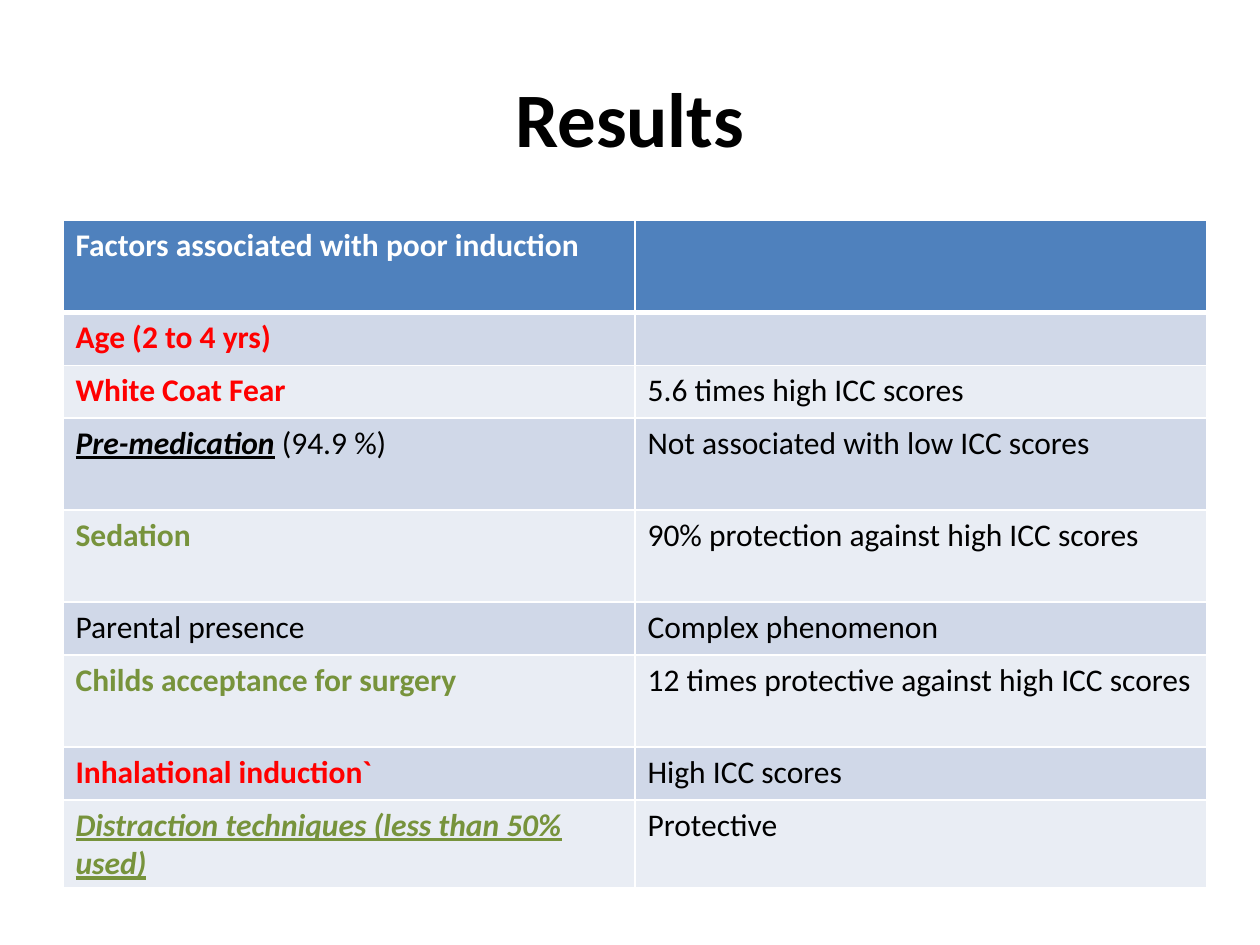
from lxml import etree
from pptx import Presentation
from pptx.dml.color import RGBColor
from pptx.enum import text
from pptx.oxml.ns import qn
from pptx.util import Inches, Pt

BLACK = RGBColor(0x00, 0x00, 0x00)
WHITE = RGBColor(0xFF, 0xFF, 0xFF)
RED = RGBColor(0xFF, 0x00, 0x00)
GREEN = RGBColor(0x77, 0x93, 0x3C)
HEADER_FILL = RGBColor(0x4F, 0x81, 0xBD)
BAND_FILLS = [RGBColor(0xE9, 0xED, 0xF4), RGBColor(0xD0, 0xD8, 0xE8)]

TITLE = "Results"
COL_WIDTH = 4.54
SHORT, TALL = 0.42, 0.73
HEADING = dict(bold=True, color=WHITE)
RISK = dict(bold=True, color=RED)
PROTECTIVE = dict(bold=True, color=GREEN)
STRESSED = dict(bold=True, italic=True, underline=True)

# Row height, runs of the factor cell, finding
ROWS = [
    (TALL, [("Factors associated with poor induction", HEADING)], ""),
    (SHORT, [("Age (2 to 4 yrs)", RISK)], ""),
    (SHORT, [("White Coat Fear", RISK)], "5.6 times high ICC scores"),
    (TALL, [("Pre-medication", STRESSED), (" (94.9 %)", {})],
     "Not associated with low ICC scores"),
    (TALL, [("Sedation", PROTECTIVE)], "90% protection against high ICC scores"),
    (SHORT, [("Parental presence", {})], "Complex phenomenon"),
    (TALL, [("Childs acceptance for surgery", PROTECTIVE)],
     "12 times protective against high ICC scores"),
    (SHORT, [("Inhalational induction`", RISK)], "High ICC scores"),
    (SHORT, [("Distraction techniques (less than 50% used)",
              {**STRESSED, "color": GREEN})], "Protective"),
]


def add_run(p, content, size=18, color=BLACK, bold=False, italic=False,
            underline=False):
    r = p.add_run()
    r.text = content
    f = r.font
    f.name, f.size = "Calibri", Pt(size)
    f.bold, f.italic, f.underline = bold, italic, underline
    f.color.rgb = color


def set_borders(cell, bottom=1):
    """Give the cell white edges; widths are in points."""
    pr = cell._tc.get_or_add_tcPr()
    widths = {"a:lnL": 1, "a:lnR": 1, "a:lnT": 1, "a:lnB": bottom}
    for i, (tag, width) in enumerate(widths.items()):
        ln = etree.Element(qn(tag), w=str(Pt(width)))
        fill = etree.SubElement(ln, qn("a:solidFill"))
        etree.SubElement(fill, qn("a:srgbClr"), val=str(WHITE))
        pr.insert(i, ln)


def add_title(slide):
    box = slide.shapes.add_textbox(Inches(0.5), Inches(0.3), Inches(9), Inches(1.25))
    tf = box.text_frame
    tf.word_wrap = True
    tf.vertical_anchor = text.MSO_ANCHOR.MIDDLE
    p = tf.paragraphs[0]
    p.alignment = text.PP_ALIGN.CENTER
    add_run(p, TITLE, size=44, bold=True)


def add_factor_table(slide):
    height = sum(row[0] for row in ROWS)
    table = slide.shapes.add_table(len(ROWS), 2, Inches(0.5), Inches(1.75),
                                   Inches(2 * COL_WIDTH), Inches(height)).table
    for col in table.columns:
        col.width = Inches(COL_WIDTH)
    for i, (row_height, factor, finding) in enumerate(ROWS):
        table.rows[i].height = Inches(row_height)
        findings = [(finding, {})] if finding else []
        for cell, runs in zip(table.rows[i].cells, (factor, findings)):
            cell.fill.solid()
            cell.fill.fore_color.rgb = BAND_FILLS[i % 2] if i else HEADER_FILL
            set_borders(cell, bottom=1 if i else 3)
            for content, style in runs:
                add_run(cell.text_frame.paragraphs[0], content, **style)


def main():
    prs = Presentation()
    prs.slide_width, prs.slide_height = Inches(10), Inches(7.5)
    slide = prs.slides.add_slide(prs.slide_layouts[6])
    add_title(slide)
    add_factor_table(slide)
    prs.save("out.pptx")


if __name__ == "__main__":
    main()
